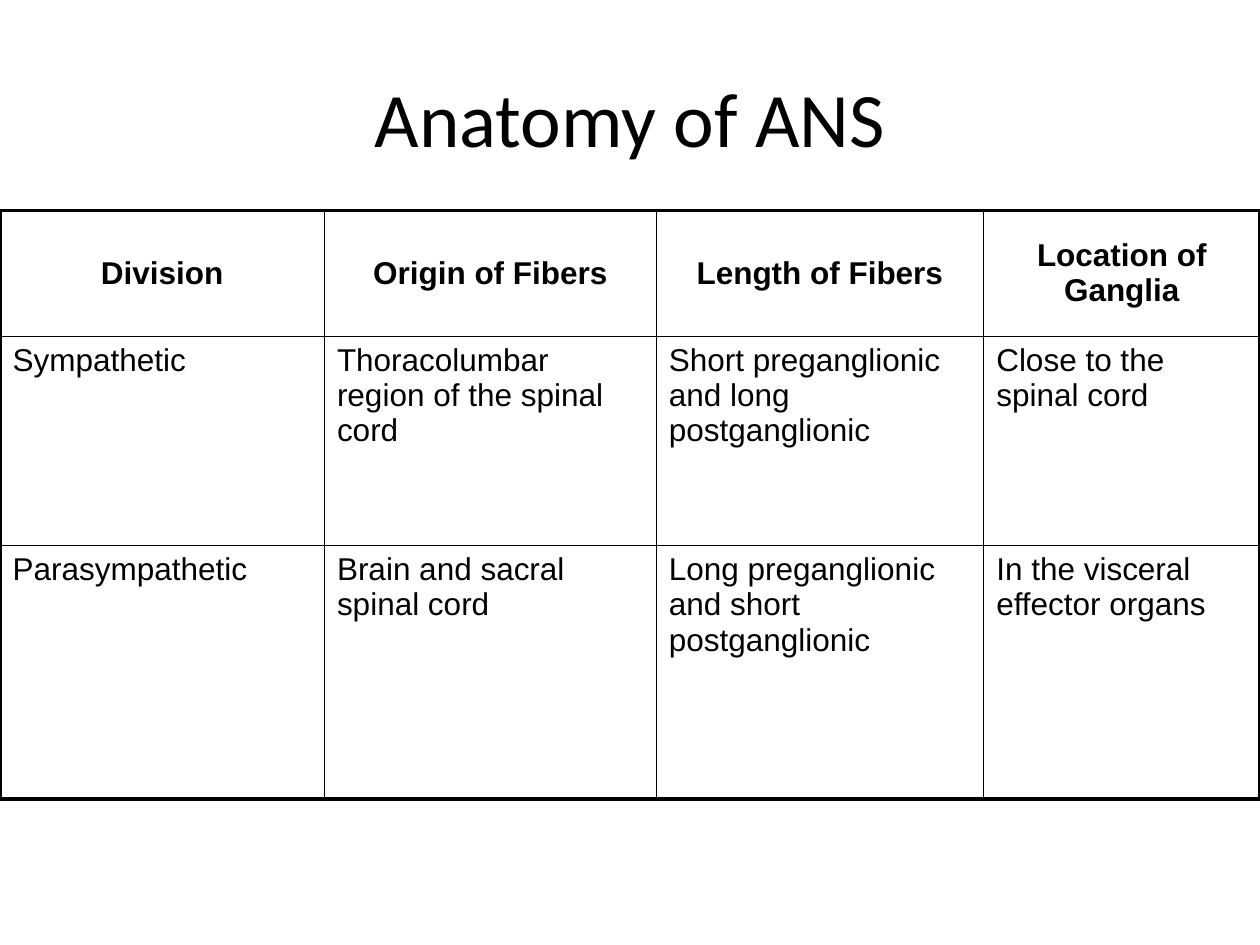
"""Build a slide with a table of the divisions of the autonomic nervous system."""
from lxml import etree
from pptx import Presentation
from pptx.dml.color import RGBColor
from pptx.enum.text import MSO_ANCHOR, PP_ALIGN
from pptx.oxml.ns import qn
from pptx.util import Cm, Pt

CENTER, LEFT = PP_ALIGN.CENTER, PP_ALIGN.LEFT
MIDDLE, TOP = MSO_ANCHOR.MIDDLE, MSO_ANCHOR.TOP
COLORS = {"text": "000000", "border": "000000"}
THIN, THICK = Pt(1), Pt(2.25)

COLUMN_WIDTHS = [6.54, 6.69, 6.6, 5.57]
ROW_HEIGHTS = [2.54, 4.22, 5.11]
ROWS = [
    ["Division", "Origin of Fibers", "Length of Fibers", "Location of Ganglia"],
    ["Sympathetic", "Thoracolumbar region of the spinal cord",
     "Short preganglionic and long postganglionic", "Close to the spinal cord"],
    ["Parasympathetic", "Brain and sacral spinal cord",
     "Long preganglionic and short postganglionic", "In the visceral effector organs"],
]


def write(text_frame, text, font_name, size, alignment, bold=False):
    text_frame.text = text
    paragraph = text_frame.paragraphs[0]
    paragraph.alignment = alignment
    font = paragraph.runs[0].font
    font.name = font_name
    font.size = Pt(size)
    font.bold = bold
    font.color.rgb = RGBColor.from_string(COLORS["text"])


def add_border(cell, side, width):
    properties = cell._tc.get_or_add_tcPr()
    line = etree.SubElement(properties, qn(f"a:{side}"), w=str(width))
    fill = etree.SubElement(line, qn("a:solidFill"))
    etree.SubElement(fill, qn("a:srgbClr"), val=COLORS["border"])


presentation = Presentation()
presentation.slide_width = Cm(25.4)
presentation.slide_height = Cm(19.05)
slide = presentation.slides.add_slide(presentation.slide_layouts[6])

table = slide.shapes.add_table(
    len(ROWS), len(COLUMN_WIDTHS), Cm(0), Cm(4.24),
    Cm(sum(COLUMN_WIDTHS)), Cm(sum(ROW_HEIGHTS))).table
table.first_row = False
table.horz_banding = False
for column, width in zip(table.columns, COLUMN_WIDTHS):
    column.width = Cm(width)
for row, height in zip(table.rows, ROW_HEIGHTS):
    row.height = Cm(height)

last_row, last_column = len(ROWS) - 1, len(COLUMN_WIDTHS) - 1
for row_index, texts in enumerate(ROWS):
    is_header = row_index == 0
    for column_index, text in enumerate(texts):
        cell = table.cell(row_index, column_index)
        cell.vertical_anchor = MIDDLE if is_header else TOP
        write(cell.text_frame, text, "Arial", 18, CENTER if is_header else LEFT, is_header)
        outer_sides = {
            "lnL": column_index == 0,
            "lnR": column_index == last_column,
            "lnT": is_header,
            "lnB": row_index == last_row,
        }
        for side, is_outer in outer_sides.items():
            add_border(cell, side, THICK if is_outer else THIN)
        cell.fill.background()

title = slide.shapes.add_textbox(Cm(1.27), Cm(0.76), Cm(22.86), Cm(3.18))
title.text_frame.word_wrap = True
title.text_frame.vertical_anchor = MIDDLE
write(title.text_frame, "Anatomy of ANS", "Calibri", 44, CENTER)

presentation.save("out.pptx")
